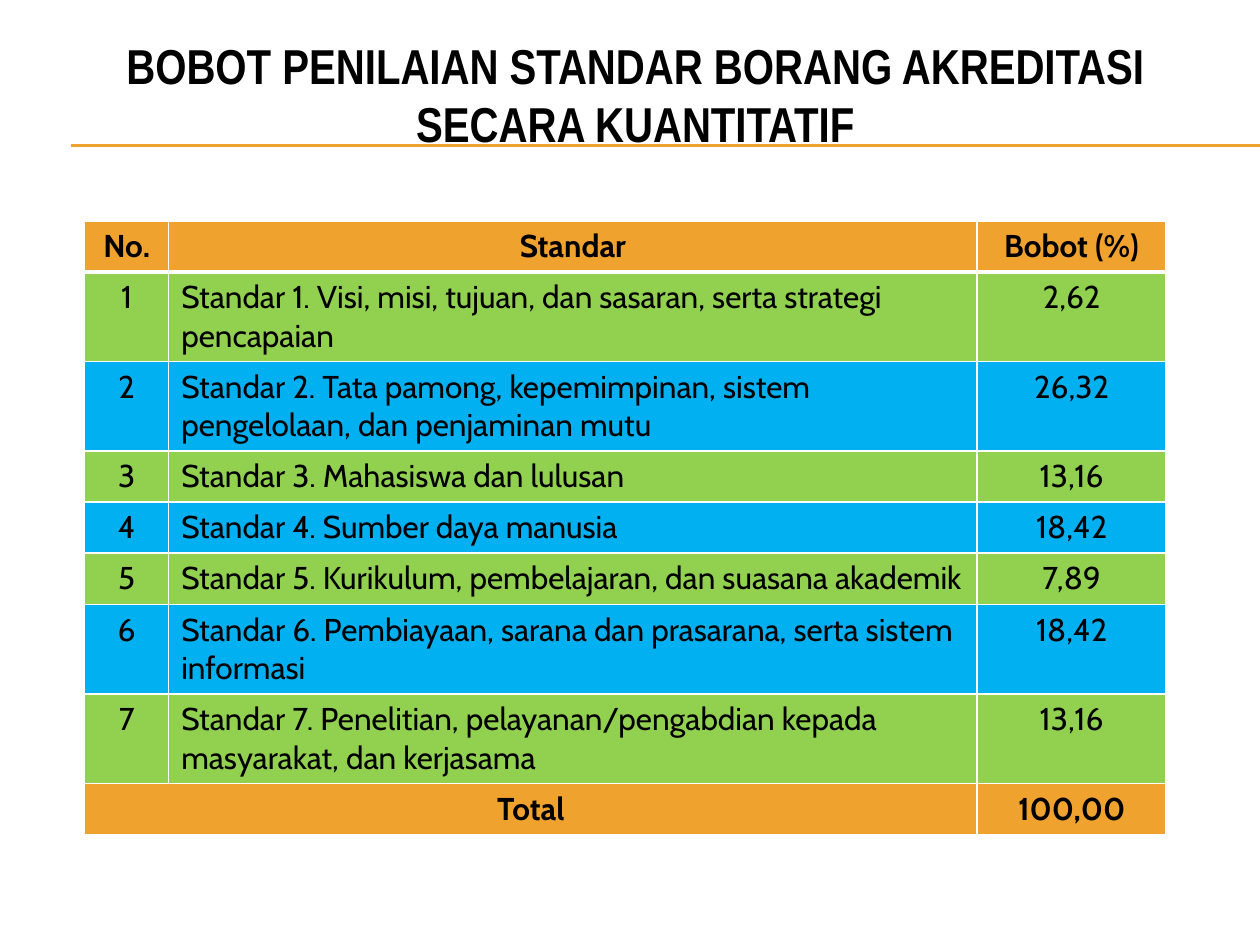
from lxml import etree
from pptx import Presentation
from pptx.dml.color import RGBColor
from pptx.enum import shapes, text
from pptx.oxml import ns
from pptx.util import Pt

TITLE = "BOBOT PENILAIAN STANDAR BORANG AKREDITASI SECARA KUANTITATIF"
HEADER = ("No.", "Standar", "Bobot (%)")
STANDARDS = [
    ("Visi, misi, tujuan, dan sasaran, serta strategi pencapaian", "2,62"),
    ("Tata pamong, kepemimpinan, sistem pengelolaan, dan penjaminan mutu", "26,32"),
    ("Mahasiswa dan lulusan", "13,16"),
    ("Sumber daya manusia", "18,42"),
    ("Kurikulum, pembelajaran, dan suasana akademik", "7,89"),
    ("Pembiayaan, sarana dan prasarana, serta sistem informasi", "18,42"),
    ("Penelitian, pelayanan/pengabdian kepada masyarakat, dan kerjasama", "13,16"),
]
TOTAL = ("Total", "", "100,00")

BLACK = RGBColor(0x00, 0x00, 0x00)
WHITE = RGBColor(0xFF, 0xFF, 0xFF)
ORANGE = RGBColor(0xF0, 0xA2, 0x2E)
GREEN = RGBColor(0x92, 0xD0, 0x50)
BLUE = RGBColor(0x00, 0xB0, 0xF0)
COL_WIDTHS = (48, 462, 108)
ROW_HEIGHT = 29.2


def style(p, font, size, bold, align):
    p.alignment = align
    for r in p.runs:
        r.font.name, r.font.size, r.font.bold = font, Pt(size), bold
        r.font.color.rgb = BLACK


def set_borders(cell, top, bottom):
    tc_pr = cell._tc.get_or_add_tcPr()
    for side, width in (("L", 1), ("R", 1), ("T", top), ("B", bottom)):
        ln = etree.SubElement(tc_pr, ns.qn(f"a:ln{side}"), w=str(Pt(width)))
        fill = etree.SubElement(ln, ns.qn("a:solidFill"))
        etree.SubElement(fill, ns.qn("a:srgbClr"), val=str(WHITE))


def add_rule(s, y):
    line = s.shapes.add_connector(shapes.MSO_CONNECTOR.STRAIGHT, Pt(40.5), Pt(y), Pt(720), Pt(y))
    line.line.color.rgb = ORANGE
    line.line.width = Pt(0.75)
    etree.SubElement(line.element.spPr, ns.qn("a:effectLst"))


def add_title(s):
    sp = s.shapes.title
    sp.left, sp.top, sp.width, sp.height = Pt(36), Pt(0), Pt(654), Pt(107.3)
    tf = sp.text_frame
    tf.text = TITLE
    tf.auto_size = text.MSO_AUTO_SIZE.NONE
    tf.vertical_anchor = text.MSO_ANCHOR.MIDDLE
    style(tf.paragraphs[0], "Arial Narrow", 28, True, text.PP_ALIGN.CENTER)
    sp.element.getparent().append(sp.element)


def add_weights(s):
    rows = [HEADER]
    rows += [(str(n), f"Standar {n}. {name}", weight)
             for n, (name, weight) in enumerate(STANDARDS, 1)]
    rows.append(TOTAL)
    last = len(rows) - 1
    table = s.shapes.add_table(len(rows), len(HEADER), Pt(48.4), Pt(126.2),
                               Pt(sum(COL_WIDTHS)), Pt(ROW_HEIGHT * len(rows))).table
    for col, width in zip(table.columns, COL_WIDTHS):
        col.width = Pt(width)
    for i, row in enumerate(rows):
        table.rows[i].height = Pt(ROW_HEIGHT)
        edge = i in (0, last)
        color = ORANGE if edge else (GREEN if i % 2 else BLUE)
        for j, value in enumerate(row):
            cell = table.cell(i, j)
            cell.text = value
            set_borders(cell, 3 if i == 1 else 1, 3 if i == 0 else 1)
            cell.fill.solid()
            cell.fill.fore_color.rgb = color
            align = text.PP_ALIGN.LEFT if j == 1 and not edge else text.PP_ALIGN.CENTER
            style(cell.text_frame.paragraphs[0], "Cabin", 18, edge, align)
    table.cell(last, 0).merge(table.cell(last, 1))


def main():
    prs = Presentation()
    prs.slide_width, prs.slide_height = Pt(720), Pt(540)
    s = prs.slides.add_slide(prs.slide_layouts[5])
    for y in (82.8, 83.5):
        add_rule(s, y)
    add_title(s)
    add_weights(s)
    prs.save("out.pptx")


if __name__ == "__main__":
    main()
